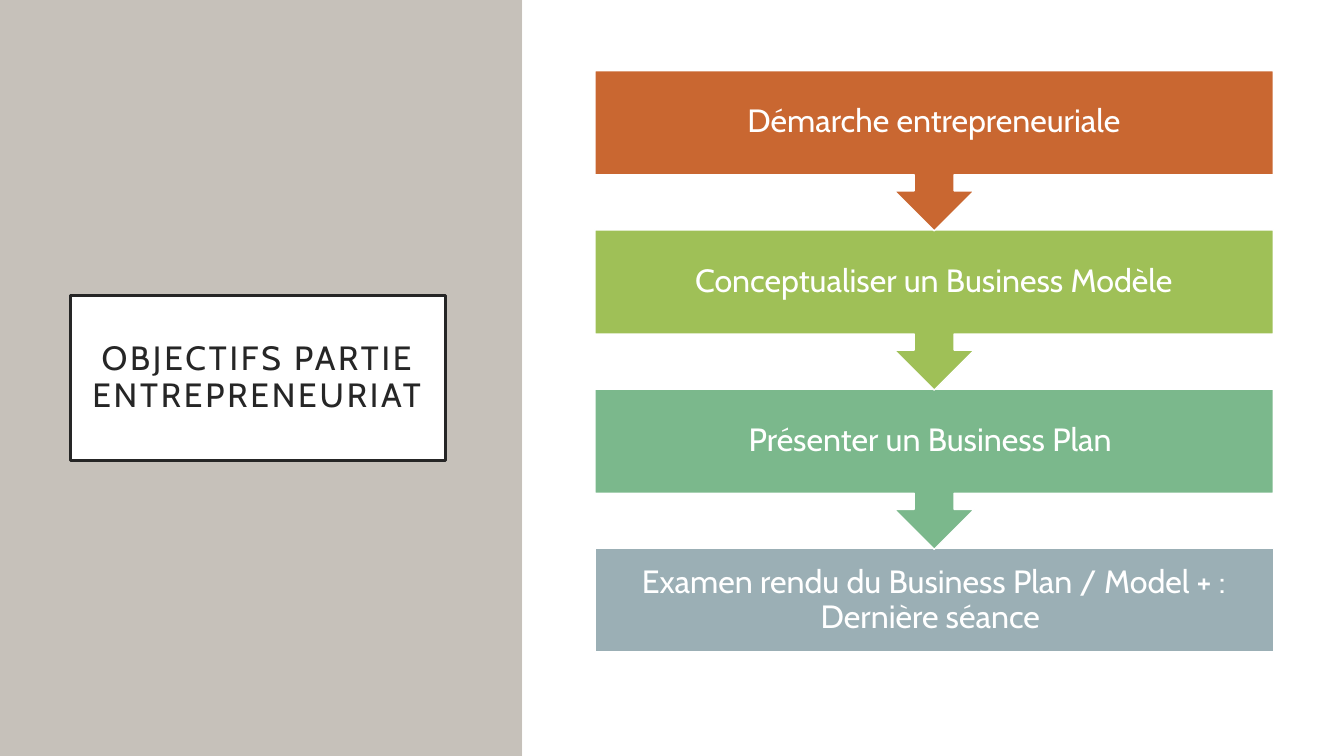
from pptx import Presentation
from pptx.dml.color import RGBColor
from pptx.enum.shapes import MSO_SHAPE as Shape
from pptx.enum.text import MSO_ANCHOR as Anchor, MSO_AUTO_SIZE as AutoSize, PP_ALIGN as Align
from pptx.util import Inches, Pt

WHITE = RGBColor(0xFF, 0xFF, 0xFF)
INK = RGBColor(0x26, 0x26, 0x26)
TAUPE = RGBColor(0xC6, 0xC1, 0xBA)
ORANGE = RGBColor(0xC9, 0x67, 0x31)
GREEN = RGBColor(0x9F, 0xC0, 0x57)
TEAL = RGBColor(0x7B, 0xB8, 0x8C)
SLATE = RGBColor(0x9B, 0xAF, 0xB5)

STEPS = [
    ("Démarche entrepreneuriale", ORANGE),
    ("Conceptualiser un Business Modèle", GREEN),
    ("Présenter un Business Plan ", TEAL),
    ("Examen rendu du Business Plan / Model + : Dernière séance ", SLATE),
]
STEP_LEFT, STEP_TOP, STEP_WIDTH = 5.9, 0.7, 6.73
STEP_PITCH, BOX_HEIGHT, CALLOUT_HEIGHT = 1.58, 1.03, 1.59


class SlideBuilder:
    font_name = "Cabin"

    def __init__(self, slide):
        self.slide = slide

    def style(self, shape, fill, line=None, line_width=1):
        shape.fill.solid()
        shape.fill.fore_color.rgb = fill
        if line is None:
            shape.line.fill.background()
        else:
            shape.line.color.rgb = line
            shape.line.width = Pt(line_width)

    def add_text(self, shape, text, size, color, inset):
        frame = shape.text_frame
        frame.word_wrap = True
        frame.auto_size = AutoSize.NONE
        frame.vertical_anchor = Anchor.MIDDLE
        frame.margin_left = frame.margin_right = Inches(inset)
        frame.margin_top = frame.margin_bottom = Inches(inset)
        paragraph = frame.paragraphs[0]
        paragraph.alignment = Align.CENTER
        paragraph.line_spacing = 0.9
        run = paragraph.add_run()
        run.text = text
        run.font.name = self.font_name
        run.font.size = Pt(size)
        run.font.color.rgb = color
        return run

    def shape(self, kind, left, top, width, height, fill, line=None):
        shape = self.slide.shapes.add_shape(
            kind, Inches(left), Inches(top), Inches(width), Inches(height))
        shape.shadow.inherit = False
        self.style(shape, fill, line)
        return shape

    def label(self, text, left, top, width, height):
        box = self.slide.shapes.add_textbox(
            Inches(left), Inches(top), Inches(width), Inches(height))
        self.add_text(box, text, 23, WHITE, 0.18)

    def title(self, text, left, top, width, height):
        title = self.slide.shapes.title
        title.left, title.top = Inches(left), Inches(top)
        title.width, title.height = Inches(width), Inches(height)
        self.style(title, WHITE, INK, 2.5)
        run = self.add_text(title, text, 24, INK, 0.2)
        run._r.get_or_add_rPr().set("spc", "200")
        self.slide.shapes._spTree.append(title._element)

    def step(self, index, text, color):
        top = STEP_TOP + index * STEP_PITCH
        if index == len(STEPS) - 1:
            self.shape(Shape.RECTANGLE, STEP_LEFT, top, STEP_WIDTH, BOX_HEIGHT, color, WHITE)
        else:
            callout = self.shape(
                Shape.UP_ARROW_CALLOUT, STEP_LEFT, top, STEP_WIDTH, CALLOUT_HEIGHT, color, WHITE)
            callout.rotation = 180
        self.label(text, STEP_LEFT, top, STEP_WIDTH, BOX_HEIGHT)


def main():
    presentation = Presentation()
    presentation.slide_width = Inches(13.33)
    presentation.slide_height = Inches(7.5)
    slide = presentation.slides.add_slide(presentation.slide_layouts[5])
    builder = SlideBuilder(slide)
    builder.shape(Shape.RECTANGLE, 0, 0, 5.18, 7.5, TAUPE)
    builder.title("OBJECTIFS PARTIE ENTREPRENEURIAT ", 0.7, 2.93, 3.72, 1.64)
    builder.shape(Shape.RECTANGLE, 5.18, 0, 8.15, 7.5, WHITE)
    for index, (text, color) in reversed(list(enumerate(STEPS))):
        builder.step(index, text, color)
    presentation.save("out.pptx")


if __name__ == "__main__":
    main()
